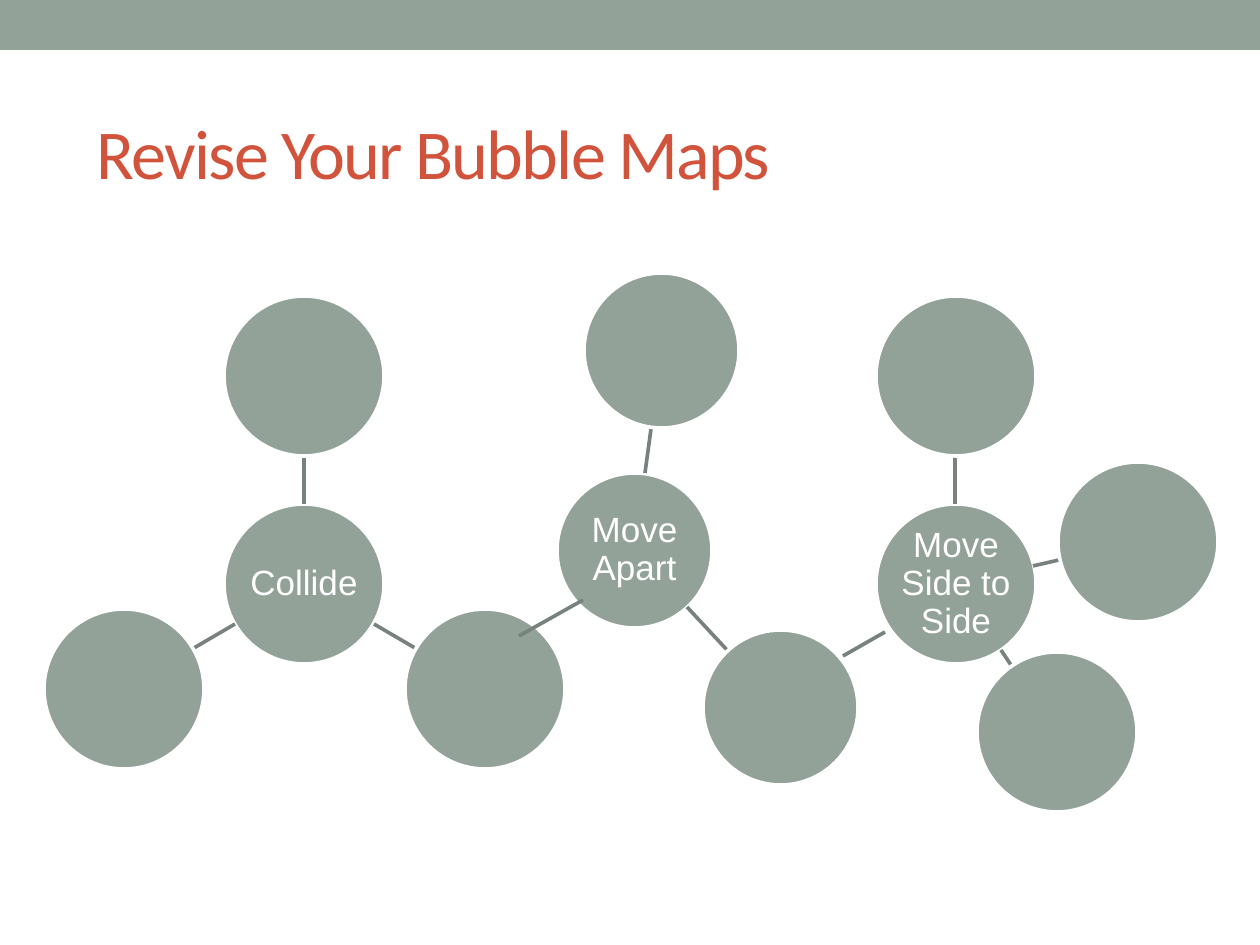
from lxml import etree
from pptx import Presentation
from pptx import util as u
from pptx.dml.color import RGBColor
from pptx.enum import shapes, text
from pptx.oxml.ns import qn

PX = u.Inches(1) / 126
SAGE = RGBColor(0x93, 0xA2, 0x99)
SLATE = RGBColor(0x76, 0x82, 0x7B)
RUST = RGBColor(0xD2, 0x53, 0x3C)
WHITE = RGBColor(0xFF, 0xFF, 0xFF)
LINE_WIDTH = u.Pt(2.08)

MAPS = [
    ("Collide", 160, (224, 504), [
        ((304, 504, 304, 456), (224, 296)),
        ((374, 624, 415, 648), (405, 609)),
        ((235, 624, 194, 648), (44, 609)),
    ]),
    ("Move Apart", 155, (557, 473), [
        ((645, 473, 651, 429), (584, 273)),
        ((687, 607, 728, 651), (703, 630)),
    ]),
    ("Move Side to Side", 160, (876, 504), [
        ((955, 504, 955, 456), (876, 296)),
        ((1033, 566, 1059, 560), (1058, 462)),
        ((1001, 650, 1011, 665), (977, 652)),
    ]),
]
BRIDGES = [(583, 600, 519, 636), (885, 632, 843, 656)]


def px(*lengths):
    return [u.Emu(round(length * PX)) for length in lengths]


def write(shape, words, *, font, size, color, align, inset, line_spacing=None, tracking=None):
    frame = shape.text_frame
    frame.word_wrap = True
    frame.vertical_anchor = text.MSO_ANCHOR.MIDDLE
    frame.margin_left = frame.margin_right = px(inset)[0]
    frame.margin_top = frame.margin_bottom = px(1)[0]
    para = frame.paragraphs[0]
    para.alignment = align
    para.line_spacing = line_spacing
    span = para.add_run()
    span.text = words
    span.font.name = font
    span.font.size = u.Pt(size)
    span.font.color.rgb = color
    if tracking:
        span._r.get_or_add_rPr().set("spc", str(tracking * 100))


def add_filled(page, kind, left, top, width, height):
    shape = page.shapes.add_shape(kind, *px(left, top, width, height))
    shape.shadow.inherit = False
    shape.fill.solid()
    shape.fill.fore_color.rgb = SAGE
    shape.line.fill.background()
    return shape


def add_bubble(page, corner, size):
    bubble = add_filled(page, shapes.MSO_SHAPE.OVAL, *corner, size, size)
    bubble.line.color.rgb = WHITE
    bubble.line.width = LINE_WIDTH
    return bubble


def add_spoke(page, ends):
    spoke = page.shapes.add_connector(shapes.MSO_CONNECTOR.STRAIGHT, *px(*ends))
    spoke.line.color.rgb = SLATE
    spoke.line.width = LINE_WIDTH
    etree.SubElement(spoke._element.spPr, qn("a:effectLst"))


def add_map(page, label, size, corner, branches):
    hub = add_bubble(page, corner, size)
    write(hub, label, font="Arial", size=20, color=WHITE,
          align=text.PP_ALIGN.CENTER, inset=1, line_spacing=0.9)
    for ends, bubble_corner in branches:
        add_spoke(page, ends)
        add_bubble(page, bubble_corner, size)


def main():
    deck = Presentation()
    deck.slide_width, deck.slide_height = px(1260, 945)
    page = deck.slides.add_slide(deck.slide_layouts[6])
    add_filled(page, shapes.MSO_SHAPE.RECTANGLE, 0, 0, 1260, 50)
    title = page.shapes.add_textbox(*px(84, 84, 1113, 136))
    write(title, "Revise Your Bubble Maps", font="Calibri", size=40, color=RUST,
          align=text.PP_ALIGN.LEFT, inset=13, tracking=-1)
    for bubble_map in MAPS:
        add_map(page, *bubble_map)
    for ends in BRIDGES:
        add_spoke(page, ends)
    deck.save("out.pptx")


if __name__ == "__main__":
    main()
